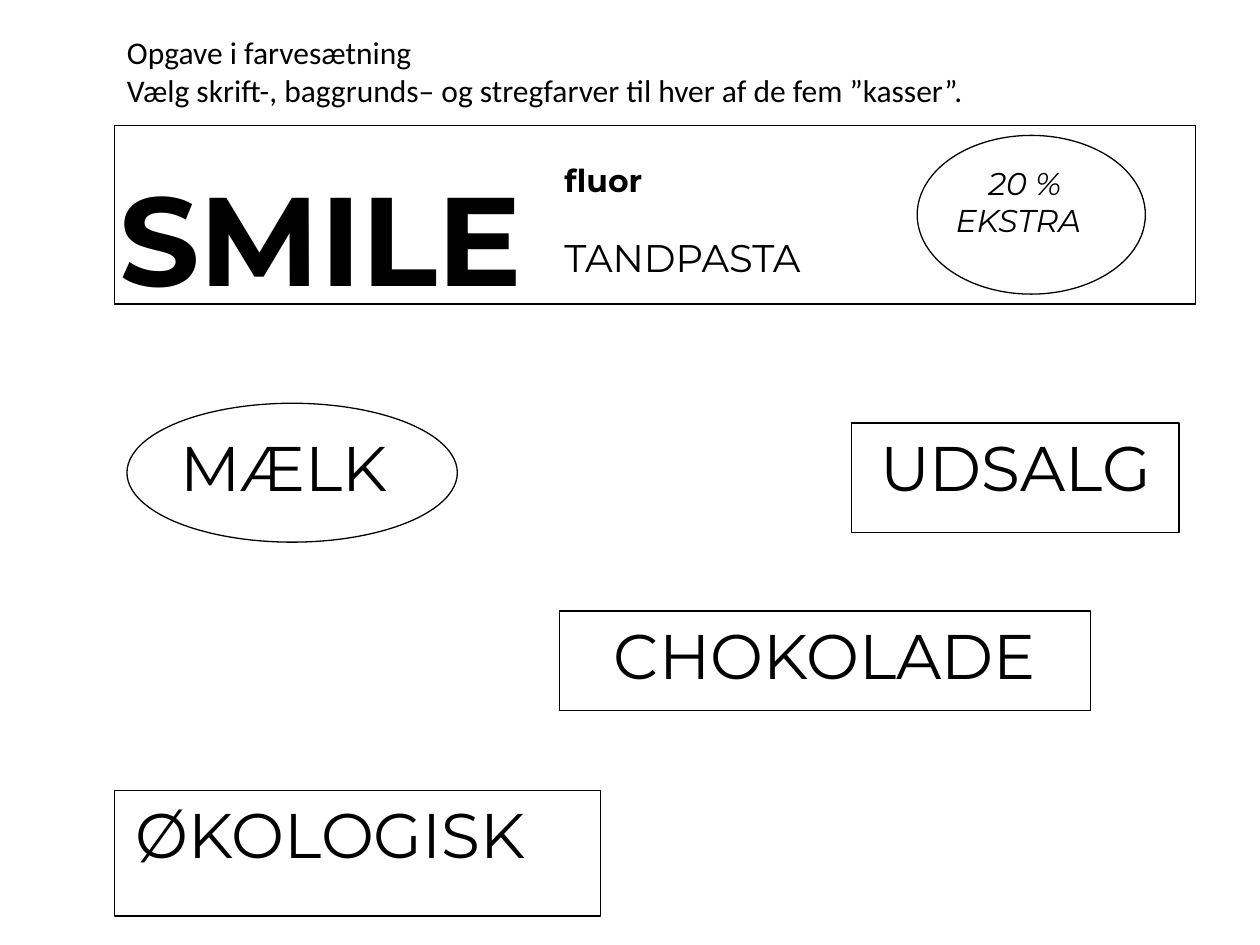
from pptx import Presentation
from pptx.dml.color import RGBColor
from pptx.enum.shapes import MSO_SHAPE
from pptx.enum.text import MSO_ANCHOR, MSO_AUTO_SIZE, PP_ALIGN
from pptx.util import Cm, Pt

HUES = {"ink": "000000", "paper": "FFFFFF"}
FONT = "Montserrat"
LEFT = 2.31  # shared left edge, in cm
INSET = 0.1


def hue(name):
    return RGBColor.from_string(HUES[name])


def write(frame, text, size, font=FONT, bold=False, slant=False,
          align=PP_ALIGN.LEFT, inset=INSET):
    """Fill a text frame and format all its runs."""
    frame.text = text
    frame.word_wrap = True
    frame.auto_size = MSO_AUTO_SIZE.NONE
    frame.vertical_anchor = MSO_ANCHOR.TOP
    frame.margin_left = frame.margin_right = Cm(inset)
    frame.margin_top = frame.margin_bottom = Cm(min(inset, 0.13))
    for para in frame.paragraphs:
        para.alignment = align
        for run in para.runs:
            run.font.name = font
            run.font.size = Pt(size)
            run.font.bold = bold
            run.font.italic = slant
            run.font.color.rgb = hue("ink")


def indent(para, gap):
    para._p.get_or_add_pPr().set("marL", str(Cm(gap)))


def outline(slide, kind, box):
    """Unfilled shape with a thin line."""
    shape = slide.shapes.add_shape(kind, *map(Cm, box))
    shape.shadow.inherit = False
    shape.fill.background()
    shape.line.color.rgb = hue("ink")
    shape.line.width = Pt(0.75)
    return shape


def label(slide, box, text, size, bold=False):
    area = slide.shapes.add_textbox(*map(Cm, box))
    write(area.text_frame, text, size, bold=bold)


def heading(slide, box):
    title = slide.shapes.title
    title.left, title.top, title.width, title.height = map(Cm, box)
    write(title.text_frame,
          "Opgave i farvesætning\n"
          "Vælg skrift-, baggrunds– og stregfarver til hver af de fem ”kasser”.",
          18, font="Calibri", inset=0.25)


def carton(slide, box):
    """Toothpaste carton with name, contents and offer."""
    x, y, wide, high = box
    outline(slide, MSO_SHAPE.RECTANGLE, box)
    label(slide, (x, y + 0.61, 9.6, 3), "SMILE", 72, bold=True)
    label(slide, (x + 8.97, y + 0.61, 2.4, 0.99), "fluor", 18, bold=True)
    label(slide, (x + 8.97, y + 2.08, 5.6, 1.2), "TANDPASTA", 22)
    offer = outline(slide, MSO_SHAPE.OVAL,
                    (x + wide - 5.61, y + 0.2, 4.6, high - 0.4))
    write(offer.text_frame, "20 %\nEKSTRA", 18, slant=True)
    indent(offer.text_frame.paragraphs[0], 0.66)


def sign(slide, box, text, kind=MSO_SHAPE.RECTANGLE, align=PP_ALIGN.CENTER,
         gap=0):
    """One outlined word."""
    frame = outline(slide, kind, box).text_frame
    write(frame, text, 36, align=align)
    if gap:
        indent(frame.paragraphs[0], gap)


def main():
    deck = Presentation()
    deck.slide_width, deck.slide_height = Cm(25.4), Cm(19.05)
    slide = deck.slides.add_slide(deck.slide_layouts[5])
    slide.background.fill.solid()
    slide.background.fill.fore_color.rgb = hue("paper")

    # Task and toothpaste carton
    heading(slide, (LEFT, 0.53, 22, 1.8))
    carton(slide, (LEFT, 2.53, 21.79, 3.6))

    # Four single-word signs
    sign(slide, (17.17, 8.53, 6.6, 2.21), "UDSALG")
    sign(slide, (11.28, 12.32, 10.7, 2), "CHOKOLADE")
    sign(slide, (LEFT, 15.93, 9.8, 2.54), "ØKOLOGISK",
         align=PP_ALIGN.LEFT, gap=0.33)
    sign(slide, (2.56, 8.13, 6.66, 2.8), "MÆLK",
         kind=MSO_SHAPE.OVAL, align=PP_ALIGN.LEFT)

    deck.save("out.pptx")


if __name__ == "__main__":
    main()
